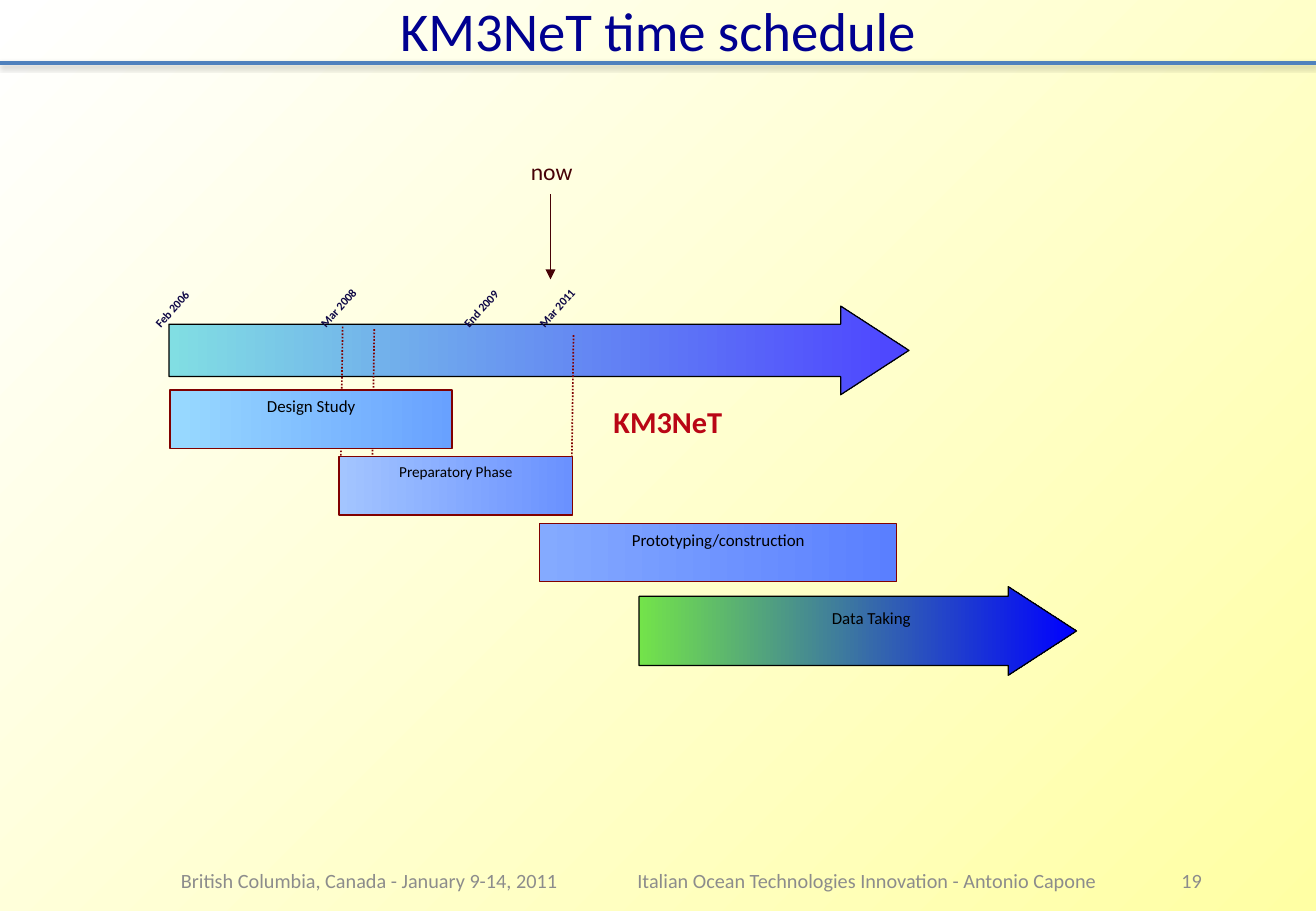
from lxml.etree import SubElement
from pptx import Presentation
from pptx.dml.color import RGBColor
from pptx.enum.dml import MSO_LINE
from pptx.enum.shapes import MSO_CONNECTOR, MSO_SHAPE
from pptx.enum.text import MSO_ANCHOR, MSO_AUTO_SIZE, PP_ALIGN
from pptx.oxml import parse_xml
from pptx.oxml.ns import nsdecls, qn
from pptx.util import Pt

PX = 9144
WIDTH, HEIGHT = 1083, 750
FONT = "Calibri"
COLORS = {
    "yellow": "FFFFA4",
    "white": "FFFFFF",
    "title": "000090",
    "rule": "4F81BD",
    "footer": "8C8C8C",
    "project": "B90615",
    "date": "0E0745",
    "now": "470207",
    "maroon": "800000",
    "black": "000000",
    "aqua": "81DEE3",
    "violet": "4D44FF",
    "green": "73E34A",
    "blue": "0000FF",
    "study_start": "99DAFF",
    "study_end": "68A1FF",
    "preparatory_start": "A3C5FF",
    "preparatory_end": "6A91FF",
    "construction_start": "84AAFF",
    "construction_end": "5A7FFF",
}
FOOTERS = [
    (139, 350, "British Columbia, Canada - January 9-14, 2011", PP_ALIGN.LEFT),
    (497, 433, "Italian Ocean Technologies Innovation - Antonio Capone", PP_ALIGN.CENTER),
    (938, 61, "19", PP_ALIGN.RIGHT),
]
DATES = [(102, "Feb 2006"), (238, "Mar 2008"), (356, "End 2009"), (418, "Mar 2011")]
MILESTONES = [(282, 269, 412), (308, 271, 415), (472, 276, 420)]
PHASES = [
    (140, 232, "Design Study", 10, "study"),
    (279, 192, "Preparatory Phase", 9, "preparatory"),
    (444, 294, "Prototyping/construction", 10, "construction"),
]
PHASE_TOP, PHASE_STEP, PHASE_HEIGHT = 321, 55, 48


def rgb(name):
    return RGBColor.from_string(COLORS[name])


def emu(*lengths):
    return [length * PX for length in lengths]


def write(shape, text, size, color, align=PP_ALIGN.LEFT, bold=False, anchor=MSO_ANCHOR.TOP):
    frame = shape.text_frame
    frame.word_wrap = True
    frame.auto_size = MSO_AUTO_SIZE.NONE
    frame.vertical_anchor = anchor
    frame.text = text
    paragraph = frame.paragraphs[0]
    paragraph.alignment = align
    font = paragraph.font
    font.name = FONT
    font.size = Pt(size)
    font.bold = bold
    font.color.rgb = rgb(color)


def add_label(slide, box, text, size, color, **style):
    label = slide.shapes.add_textbox(*emu(*box))
    write(label, text, size, color, **style)
    return label


def fill_gradient(fill, start, end):
    fill.gradient()
    fill.gradient_angle = 0
    for stop, color in zip(fill.gradient_stops, (start, end)):
        stop.color.rgb = rgb(color)


def add_bar(slide, kind, box, start, end, border):
    bar = slide.shapes.add_shape(kind, *emu(*box))
    bar.shadow.inherit = False
    fill_gradient(bar.fill, start, end)
    bar.line.color.rgb = rgb(border)
    bar.line.width = Pt(0.75)
    return bar


def add_arrow(slide, box, start, end, shaft):
    arrow = add_bar(slide, MSO_SHAPE.RIGHT_ARROW, box, start, end, "black")
    arrow.adjustments[0] = shaft
    arrow.adjustments[1] = 0.77
    return arrow


def add_line(slide, ends, color, width):
    line = slide.shapes.add_connector(MSO_CONNECTOR.STRAIGHT, *emu(*ends))
    line.line.color.rgb = rgb(color)
    line.line.width = Pt(width)
    SubElement(line.element.spPr, qn("a:effectLst"))
    return line


def add_title_rule(slide):
    rule = add_line(slide, (0, 52, WIDTH, 52), "rule", 2)
    rule.element.spPr.find(qn("a:effectLst")).append(parse_xml(
        f'<a:outerShdw {nsdecls("a")} blurRad="{Pt(3.1)}" dist="{Pt(1.6)}" dir="5400000" '
        f'rotWithShape="0"><a:srgbClr val="{COLORS["black"]}"><a:alpha val="38000"/>'
        '</a:srgbClr></a:outerShdw>'))


def paint_background(slide):
    fill_gradient(slide.background.fill, "yellow", "white")
    linear = next(slide.element.iter(qn("a:lin")))
    linear.getparent().replace(linear, parse_xml(
        f'<a:path {nsdecls("a")} path="circle"><a:fillToRect l="100000" t="100000"/></a:path>'))


def add_now_marker(slide):
    pointer = add_line(slide, (453, 160, 453, 230), "now", 0.75)
    SubElement(pointer.line._get_or_add_ln(), qn("a:tailEnd"), type="triangle")
    add_label(slide, (427, 124, 84, 34), "now", 14, "now")


def add_timeline(slide):
    add_arrow(slide, (139, 252, 609, 73), "aqua", "violet", 0.591)
    for left, date in DATES:
        label = add_label(slide, (left, 217, 127, 22), date, 7, "date", bold=True)
        label.rotation = 311.9
    add_now_marker(slide)
    for x, top, bottom in MILESTONES:
        milestone = add_line(slide, (x, top, x - 2, bottom), "maroon", 1)
        milestone.line.dash_style = MSO_LINE.ROUND_DOT


def add_phases(slide):
    for row, (left, width, name, size, tone) in enumerate(PHASES):
        box = (left, PHASE_TOP + row * PHASE_STEP, width, PHASE_HEIGHT)
        phase = add_bar(slide, MSO_SHAPE.RECTANGLE, box, f"{tone}_start", f"{tone}_end", "maroon")
        write(phase, name, size, "black", align=PP_ALIGN.CENTER)


def add_data_taking(slide):
    arrow = add_arrow(slide, (526, 483, 360, 73), "green", "blue", 0.781)
    label = add_label(slide, (570, 495, 294, 49), "Data Taking", 10, "black",
                      align=PP_ALIGN.CENTER)
    slide.shapes.add_group_shape([arrow, label])


def main():
    deck = Presentation()
    deck.slide_width, deck.slide_height = emu(WIDTH, HEIGHT)
    slide = deck.slides.add_slide(deck.slide_layouts[5])
    paint_background(slide)
    add_title_rule(slide)

    title = slide.shapes.title
    title.left, title.top, title.width, title.height = emu(0, 0, WIDTH, 49)
    write(title, "KM3NeT time schedule", 32.4, "title",
          align=PP_ALIGN.CENTER, anchor=MSO_ANCHOR.MIDDLE)

    for left, width, text, align in FOOTERS:
        add_label(slide, (left, 715, width, 20), text, 12, "footer",
                  align=align, anchor=MSO_ANCHOR.MIDDLE)
    add_label(slide, (495, 327, 181, 40), "KM3NeT", 18, "project", bold=True)
    add_timeline(slide)
    add_phases(slide)
    add_data_taking(slide)
    deck.save("out.pptx")


if __name__ == "__main__":
    main()
